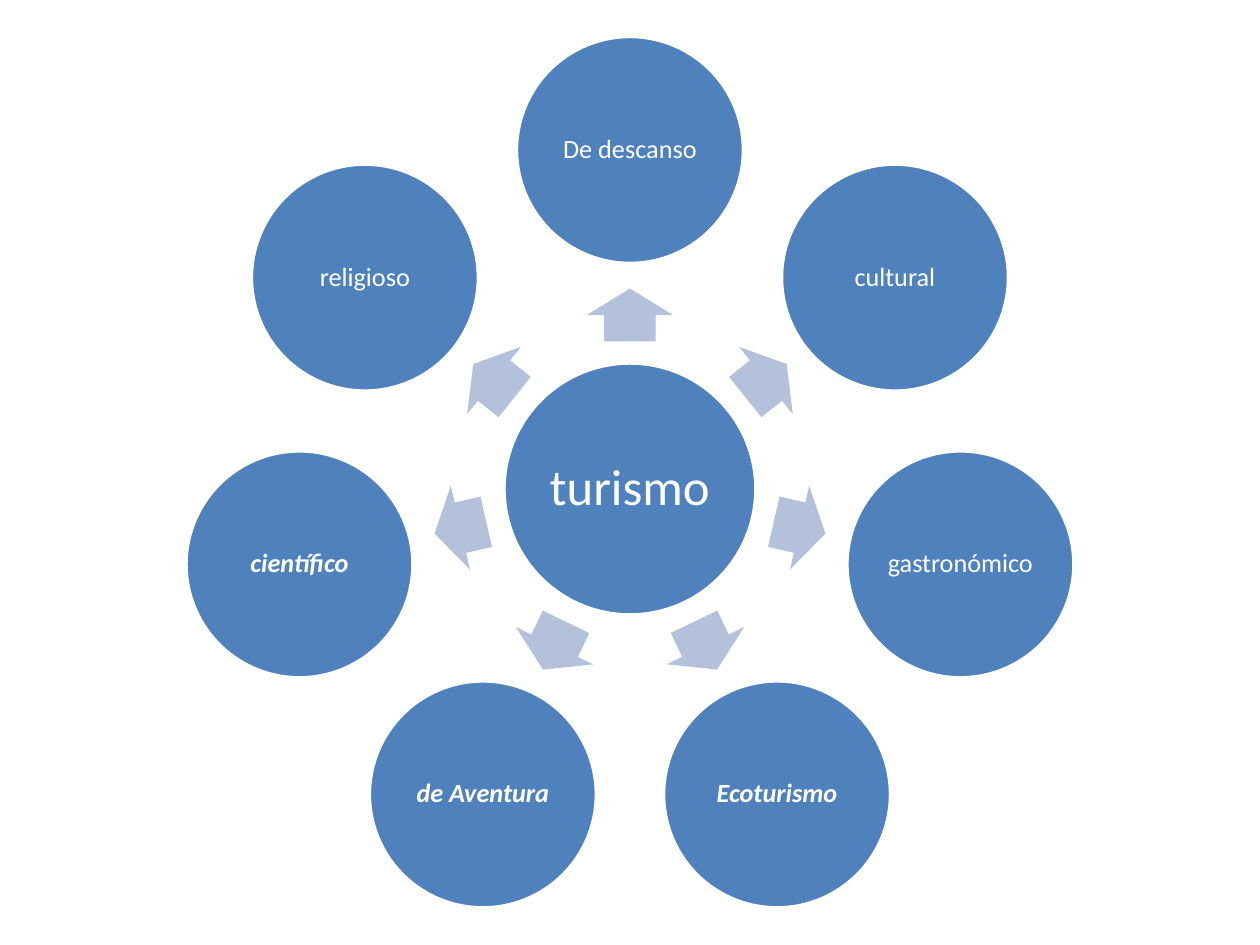
import math

import pptx
import pptx.dml.color
import pptx.enum.shapes
import pptx.enum.text
import pptx.util

RGBColor = pptx.dml.color.RGBColor
SHAPE = pptx.enum.shapes.MSO_SHAPE

BLUE = RGBColor(0x4F, 0x81, 0xBD)
PALE = RGBColor(0xB3, 0xC1, 0xDB)
WHITE = RGBColor(0xFF, 0xFF, 0xFF)

SCALE = 914400 / 126
MID_X, MID_Y = 630, 489
HUB, NODE = 252, 227
RING, ARROW_RING = 339, 174
ARROW_W, ARROW_H = 53, 86

PLAIN = {"size": pptx.util.Pt(15)}
STRONG = {**PLAIN, "bold": True, "italic": True}
LARGE = {"size": pptx.util.Pt(29)}

KINDS = [
    ("De descanso", PLAIN),
    ("cultural", PLAIN),
    ("gastronómico", PLAIN),
    ("Ecoturismo", STRONG),
    ("de Aventura", STRONG),
    ("científico", STRONG),
    ("religioso", PLAIN),
]


def px(n):
    return pptx.util.Emu(round(n * SCALE))


def polar(radius, angle):
    """Point at a clockwise angle from the right of the hub."""
    turn = math.radians(angle)
    return MID_X + radius * math.cos(turn), MID_Y + radius * math.sin(turn)


def add_shape(group, kind, mid, width, height, color):
    """Add a filled shape centred on mid."""
    x, y = mid
    shape = group.shapes.add_shape(
        kind, px(x - width / 2), px(y - height / 2), px(width), px(height))
    shape.shadow.inherit = False
    shape.fill.solid()
    shape.fill.fore_color.rgb = color
    return shape


def add_circle(group, mid, size, text, style, inset):
    circle = add_shape(group, SHAPE.OVAL, mid, size, size, BLUE)
    circle.line.color.rgb = WHITE
    circle.line.width = pptx.util.Pt(2)
    frame = circle.text_frame
    frame.word_wrap = True
    frame.vertical_anchor = pptx.enum.text.MSO_ANCHOR.MIDDLE
    for side in ("left", "top", "right", "bottom"):
        setattr(frame, f"margin_{side}", px(inset))
    para = frame.paragraphs[0]
    para.alignment = pptx.enum.text.PP_ALIGN.CENTER
    para.line_spacing = 0.9
    run = para.add_run()
    run.text = text
    run.font.color.rgb = WHITE
    for name, value in {"name": "Calibri", **style}.items():
        setattr(run.font, name, value)


def add_arrow(group, angle):
    arrow = add_shape(group, SHAPE.RIGHT_ARROW, polar(ARROW_RING, angle),
                      ARROW_W, ARROW_H, PALE)
    arrow.line.fill.background()
    arrow.adjustments[0] = 0.6
    arrow.adjustments[1] = 0.5
    arrow.rotation = angle % 360


def main():
    deck = pptx.Presentation()
    deck.slide_width = px(1260)
    deck.slide_height = px(945)
    slide = deck.slides.add_slide(deck.slide_layouts[6])
    group = slide.shapes.add_group_shape()
    add_circle(group, (MID_X, MID_Y), HUB, "turismo", LARGE, 5)
    for i, (text, style) in enumerate(KINDS):
        angle = 360 * i / len(KINDS) - 90
        add_arrow(group, angle)
        add_circle(group, polar(RING, angle), NODE, text, style, 3)
    deck.save("out.pptx")


if __name__ == "__main__":
    main()
